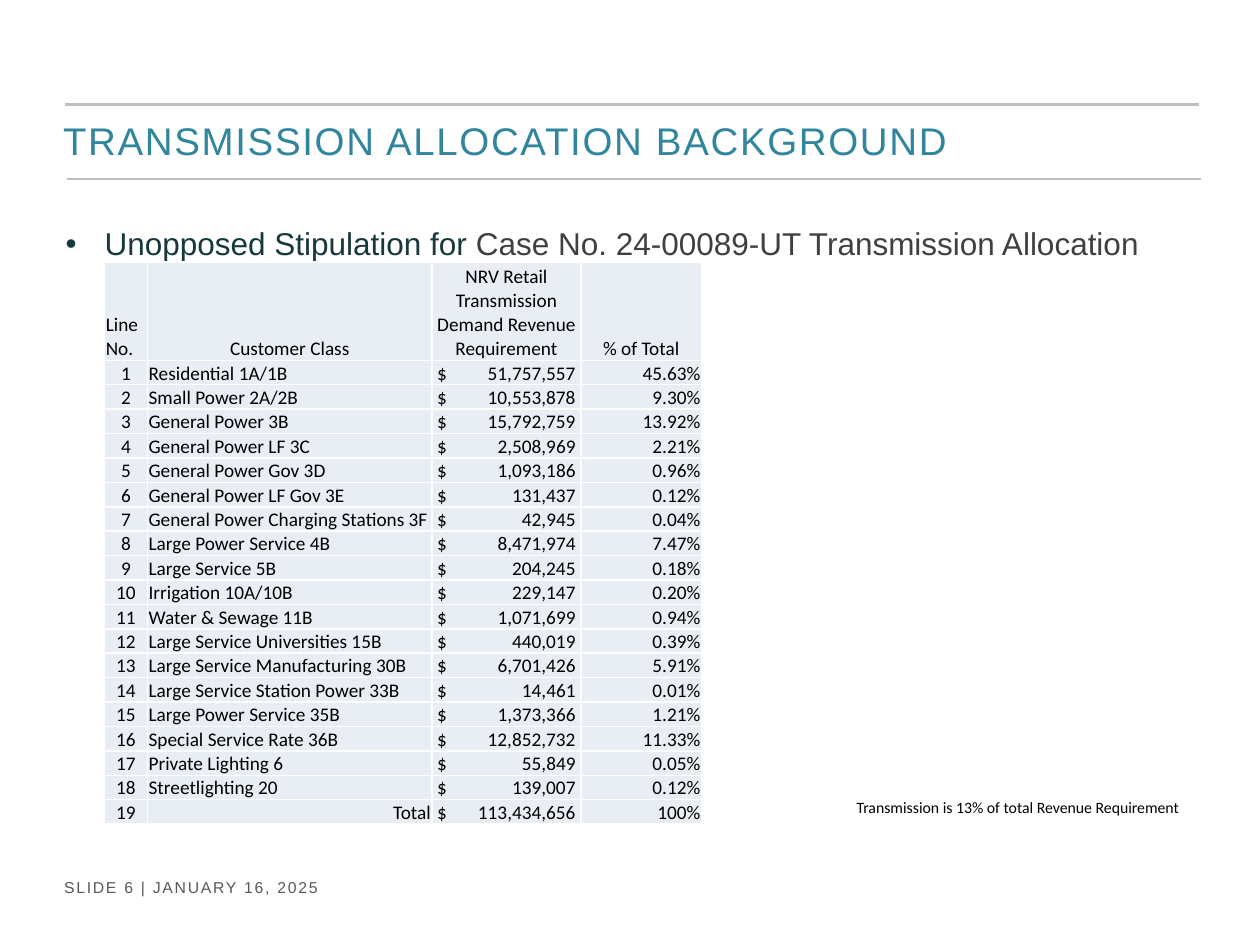
from lxml.etree import SubElement
from pptx import Presentation
from pptx.dml.color import RGBColor
from pptx.enum.shapes import MSO_CONNECTOR
from pptx.enum.text import MSO_ANCHOR, MSO_AUTO_SIZE, PP_ALIGN
from pptx.oxml.ns import qn
from pptx.util import Inches, Pt

COLORS = {
    "rule": "BFBFBF", "footer": "595959", "title": "31859C", "lead": "17383D",
    "body": "404040", "ink": "000000", "cell": "E9EDF4", "border": "FFFFFF",
}
LEFT, CENTER, RIGHT = PP_ALIGN.LEFT, PP_ALIGN.CENTER, PP_ALIGN.RIGHT

HEADERS = ["Line No.", "Customer Class",
           "NRV Retail Transmission Demand Revenue Requirement", "% of Total"]
CLASSES = [
    ("Residential 1A/1B", "51,757,557", "45.63%"),
    ("Small Power 2A/2B", "10,553,878", "9.30%"),
    ("General Power 3B", "15,792,759", "13.92%"),
    ("General Power LF 3C", "2,508,969", "2.21%"),
    ("General Power Gov 3D", "1,093,186", "0.96%"),
    ("General Power LF Gov 3E", "131,437", "0.12%"),
    ("General Power Charging Stations 3F", "42,945", "0.04%"),
    ("Large Power Service 4B", "8,471,974", "7.47%"),
    ("Large Service 5B", "204,245", "0.18%"),
    ("Irrigation 10A/10B", "229,147", "0.20%"),
    ("Water & Sewage 11B", "1,071,699", "0.94%"),
    ("Large Service Universities 15B", "440,019", "0.39%"),
    ("Large Service Manufacturing 30B", "6,701,426", "5.91%"),
    ("Large Service Station Power 33B", "14,461", "0.01%"),
    ("Large Power Service 35B", "1,373,366", "1.21%"),
    ("Special Service Rate 36B", "12,852,732", "11.33%"),
    ("Private Lighting 6", "55,849", "0.05%"),
    ("Streetlighting 20", "139,007", "0.12%"),
    ("Total", "113,434,656", "100%"),
]


def grid(*units):
    """Turn grid units (100 columns by 75 rows) into lengths."""
    return [Inches(unit / 10) for unit in units]


class SlideBuilder:
    def __init__(self, slide, heading_font="Arial", table_font="Calibri"):
        self.slide = slide
        self.heading_font = heading_font
        self.table_font = table_font

    def add_run(self, para, text, size, color, font, spacing=None):
        span = para.add_run()
        span.text = text
        span.font.size = Pt(size)
        span.font.name = font
        span.font.color.rgb = RGBColor.from_string(COLORS[color])
        if spacing:
            span.font._element.set("spc", str(spacing * 100))

    def place(self, shape, *units):
        shape.left, shape.top, shape.width, shape.height = grid(*units)
        shape.text_frame.auto_size = MSO_AUTO_SIZE.NONE
        return shape.text_frame.paragraphs[0]

    def rule(self, left, top, width):
        line = self.slide.shapes.add_connector(
            MSO_CONNECTOR.STRAIGHT, *grid(left, top, left + width, top))
        line.line.color.rgb = RGBColor.from_string(COLORS["rule"])
        line.line.width = Pt(1.5)
        SubElement(line._element.spPr, qn("a:effectLst"))

    def title(self, text, *units):
        shape = self.slide.shapes.title
        para = self.place(shape, *units)
        shape.text_frame.vertical_anchor = MSO_ANCHOR.MIDDLE
        para.alignment = LEFT
        self.add_run(para, text, 22, "title", self.heading_font, spacing=1)

    def bullet(self, runs, *units):
        para = self.place(self.slide.placeholders[1], *units)
        props = para._p.get_or_add_pPr()
        props.set("marL", str(Inches(0.31)))
        props.set("indent", str(Inches(-0.31)))
        SubElement(props, qn("a:buFont"), typeface=self.heading_font)
        SubElement(props, qn("a:buChar"), char="•")
        para.space_before = Pt(0)
        para.line_spacing = 1.2
        for text, color in runs:
            self.add_run(para, text, 18, color, self.heading_font)

    def label(self, text, color, font, *units, wrap=True, spacing=None):
        box = self.slide.shapes.add_textbox(*grid(*units))
        box.text_frame.word_wrap = wrap
        box.text_frame.auto_size = MSO_AUTO_SIZE.SHAPE_TO_FIT_TEXT
        self.add_run(box.text_frame.paragraphs[0], text, 9, color, font, spacing)

    def cell(self, cell, text, alignment, money=False):
        cell.margin_left = cell.margin_right = cell.margin_top = Inches(0.01)
        cell.margin_bottom = 0
        cell.vertical_anchor = MSO_ANCHOR.BOTTOM
        props = cell._tc.get_or_add_tcPr()
        for side in ("lnL", "lnR", "lnT", "lnB"):
            border = SubElement(props, qn(f"a:{side}"), w=str(Pt(1)))
            paint = SubElement(border, qn("a:solidFill"))
            SubElement(paint, qn("a:srgbClr"), val=COLORS["border"])
        cell.fill.solid()
        cell.fill.fore_color.rgb = RGBColor.from_string(COLORS["cell"])
        para = cell.text_frame.paragraphs[0]
        para.alignment = alignment
        if money:
            # Dollar sign at the left, amount against a right tab stop
            para_props = para._p.get_or_add_pPr()
            para_props.set("marL", str(Inches(0.03)))
            tabs = SubElement(para_props, qn("a:tabLst"))
            SubElement(tabs, qn("a:tab"), pos=str(Inches(1.1)), algn="r")
            text = f"$\t{text}"
        self.add_run(para, text, 11, "ink", self.table_font)

    def table(self, headers, records, left, top, widths, header_height, row_height):
        heights = [header_height] + [row_height] * len(records)
        table = self.slide.shapes.add_table(
            len(heights), len(widths),
            *grid(left, top, sum(widths), sum(heights))).table
        table.first_row = table.horz_banding = False
        for column, width in zip(table.columns, grid(*widths)):
            column.width = width
        for row, height in zip(table.rows, grid(*heights)):
            row.height = height
        for index, text in enumerate(headers):
            self.cell(table.cell(0, index), text, CENTER if index else LEFT)
        for number, (name, amount, share) in enumerate(records, 1):
            line, customer, revenue, percent = table.rows[number].cells
            self.cell(line, str(number), CENTER)
            self.cell(customer, name, RIGHT if name == "Total" else LEFT)
            self.cell(revenue, amount, LEFT, money=True)
            self.cell(percent, share, RIGHT)


def main():
    deck = Presentation()
    deck.slide_width, deck.slide_height = grid(100, 75)
    page = SlideBuilder(deck.slides.add_slide(deck.slide_layouts[1]))

    # Rules around the title, and the footer
    page.rule(5.2, 8.3, 90)
    page.rule(5.3, 14.2, 90)
    page.label("SLIDE 6 | JANUARY 16, 2025", "footer", page.heading_font,
               4.1, 69.2, 26.8, 2.5, spacing=1)

    # Title and lead bullet
    page.title("TRANSMISSION ALLOCATION BACKGROUND", 4, 8.2, 91, 5.8)
    page.bullet([("Unopposed Stipulation for ", "lead"),
                 ("Case No. 24-00089-UT Transmission Allocation", "body")],
                4.2, 16.7, 90.9, 47.5)

    # Allocation table and side note
    page.table(HEADERS, CLASSES, 8.3, 20.8, [3.4, 22.6, 11.8, 9.6], 7.8, 1.7)
    page.label("Transmission is 13% of total Revenue Requirement", "ink",
               page.table_font, 67, 62.8, 28.1, 2.5, wrap=False)

    deck.save("out.pptx")


if __name__ == "__main__":
    main()
